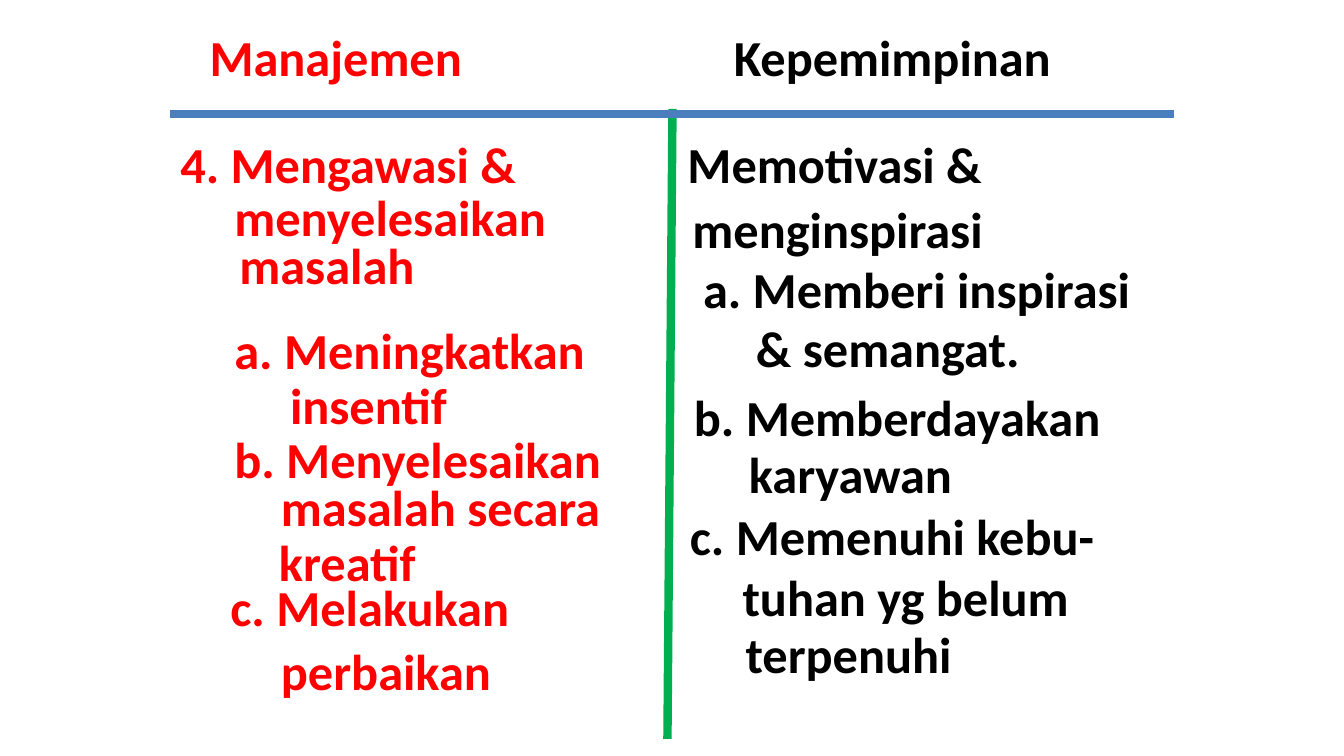
from lxml import etree
from pptx import Presentation
from pptx.dml.color import RGBColor
from pptx.enum.shapes import MSO_CONNECTOR
from pptx.enum.text import MSO_AUTO_SIZE
from pptx.oxml.ns import qn
from pptx.util import Inches, Pt

STRAIGHT = MSO_CONNECTOR.STRAIGHT
GROW = MSO_AUTO_SIZE.SHAPE_TO_FIT_TEXT

RED = "FF0000"
BLACK = "000000"
GREEN = "00B050"
BLUE = "4B7EBC"

HEADINGS = [("Manajemen", 1.98, RED), ("Kepemimpinan", 7.18, BLACK)]

MANAGEMENT = [
    ("4. Mengawasi &", 1.69, 1.27, 0),
    ("menyelesaikan", 1.66, 1.8, 5),
    ("masalah", 1.71, 2.27, 5),
    ("a. Meningkatkan", 1.66, 3.12, 5),
    ("insentif", 1.76, 3.66, 9),
    ("b. Menyelesaikan", 1.66, 4.2, 5),
    ("masalah secara", 1.67, 4.67, 9),
    ("kreatif", 1.65, 5.22, 9),
    ("c. Melakukan", 1.62, 5.67, 5),
    ("perbaikan", 1.67, 6.3, 9),
]

LEADERSHIP = [
    ("Memotivasi &", 6.72, 1.27, 0),
    ("menginspirasi", 6.77, 1.92, 0),
    ("a. Memberi inspirasi", 6.76, 2.51, 1),
    ("& semangat.", 6.72, 3.1, 6),
    ("b. Memberdayakan", 6.67, 3.78, 1),
    ("karyawan", 6.65, 4.35, 6),
    ("c. Memenuhi kebu-", 6.63, 4.96, 1),
    ("tuhan yg belum", 6.7, 5.57, 5),
    ("terpenuhi", 6.73, 6.13, 5),
]


def color(value):
    return RGBColor.from_string(value)


class PageBuilder:
    font_format = {"name": "Calibri", "size": Pt(36), "bold": True}
    text_height = 0.71
    margin = 0.1
    indent_step = 0.113

    def __init__(self, page):
        self.page = page

    def text(self, words, left, top, width, shade, indent=0):
        box = self.page.shapes.add_textbox(
            Inches(left), Inches(top), Inches(width), Inches(self.text_height)
        )
        frame_format = {
            "word_wrap": True,
            "auto_size": GROW,
            "margin_left": Inches(self.margin + indent * self.indent_step),
        }
        for name, value in frame_format.items():
            setattr(box.text_frame, name, value)
        span = box.text_frame.paragraphs[0].add_run()
        span.text = words
        for name, value in self.font_format.items():
            setattr(span.font, name, value)
        span.font.color.rgb = color(shade)

    def line(self, start, end, shade, weight=6):
        points = [Inches(value) for value in (*start, *end)]
        connector = self.page.shapes.add_connector(STRAIGHT, *points)
        connector.line.color.rgb = color(shade)
        connector.line.width = Pt(weight)
        etree.SubElement(connector._element.spPr, qn("a:effectLst"))


def main():
    deck = Presentation()
    deck.slide_width = Inches(13.33)
    deck.slide_height = Inches(7.5)
    builder = PageBuilder(deck.slides.add_slide(deck.slide_layouts[6]))

    for words, left, shade in HEADINGS:
        builder.text(words, left, 0.21, 4.33, shade)

    builder.line((6.67, 1.08), (6.62, 7.33), GREEN)
    builder.line((1.69, 1.13), (11.64, 1.13), BLUE)

    for column, shade in ((MANAGEMENT, RED), (LEADERSHIP, BLACK)):
        for words, left, top, indent in column:
            builder.text(words, left, top, 4.9, shade, indent)

    deck.save("out.pptx")


if __name__ == "__main__":
    main()
